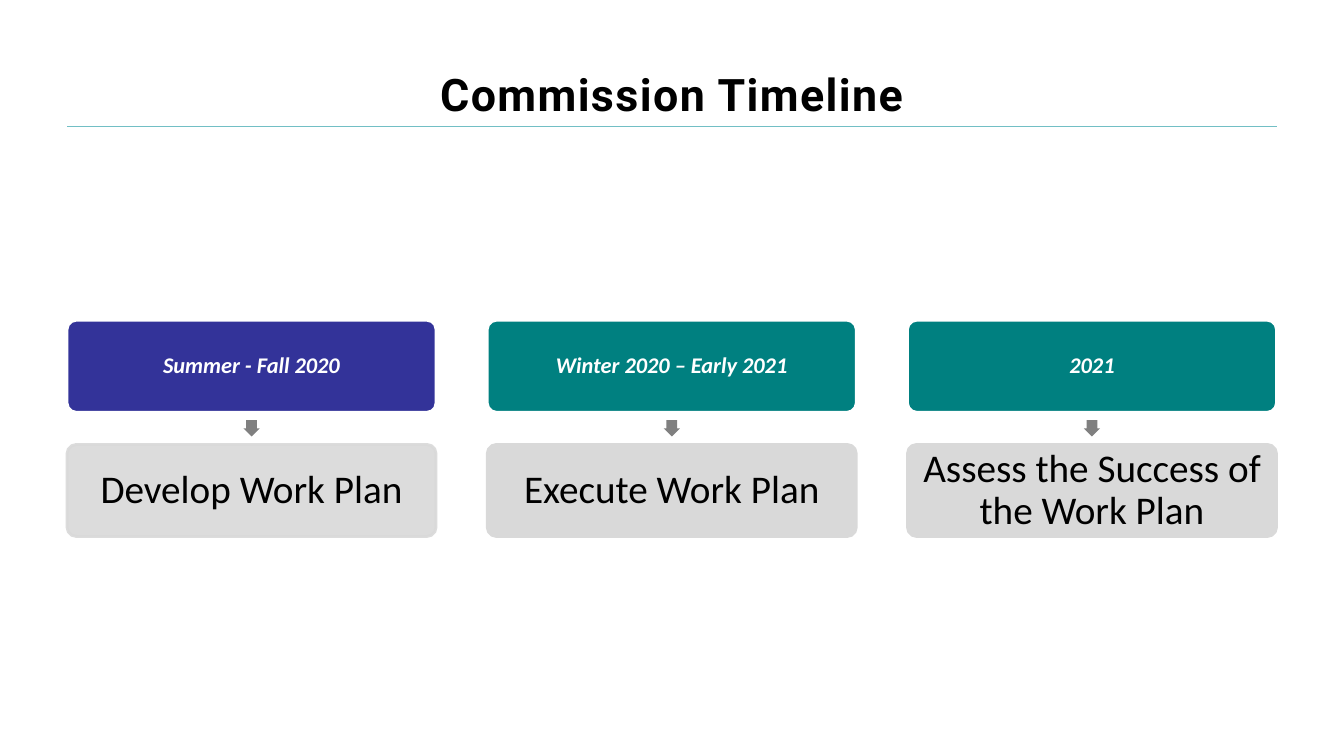
from dataclasses import dataclass

from pptx import Presentation
from pptx import util as u
from pptx.dml.color import RGBColor
from pptx.enum import shapes, text
from pptx.oxml import ns, xmlchemy


@dataclass(frozen=True)
class Theme:
    white: str = "FFFFFF"
    black: str = "000000"
    indigo: str = "333399"
    teal: str = "008080"
    rule: str = "72BFC5"
    panel: str = "D9D9D9"
    arrow: str = "808080"
    title_font: str = "Roboto"
    body_font: str = "Calibri"
    title_size: int = 32
    period_size: int = 16
    task_size: int = 28


THEME = Theme()
LEFT = 1.69
BOX_WIDTH, BOX_HEIGHT = 9.3, 2.32
COLUMN_PITCH = 10.59
PERIOD_TOP, ARROW_TOP, TASK_TOP = 8.07, 10.59, 11.2
ARROW_SIZE = 0.41

STAGES = [
    ("Summer - Fall 2020", "Develop Work Plan", THEME.indigo, 90),
    ("Winter 2020 – Early 2021", "Execute Work Plan", THEME.teal, 100),
    ("2021", "Assess the Success of the Work Plan", THEME.teal, 100),
]


def set_text(shape, words, font_name, size, color, bold=False, italic=False):
    frame = shape.text_frame
    frame.word_wrap = True
    frame.vertical_anchor = text.MSO_ANCHOR.MIDDLE
    frame.text = words
    paragraph = frame.paragraphs[0]
    paragraph.alignment = text.PP_ALIGN.CENTER
    font = paragraph.runs[0].font
    font.name, font.size = font_name, u.Pt(size)
    font.bold, font.italic = bold, italic
    font.color.rgb = RGBColor.from_string(color)
    return paragraph


def set_opacity(shape, percent):
    for color in shape.fill._xPr.iter(ns.qn("a:srgbClr")):
        alpha = xmlchemy.OxmlElement("a:alpha")
        alpha.set("val", str(percent * 1000))
        color.append(alpha)


def add_title(slide, words):
    box = slide.shapes.add_textbox(u.Cm(LEFT), u.Cm(0.76), u.Cm(30.48), u.Cm(3.18))
    paragraph = set_text(box, words, THEME.title_font, THEME.title_size, THEME.black, bold=True)
    paragraph.runs[0].font._element.set("spc", "100")


def add_rule(slide):
    y = u.Cm(3.18)
    line = slide.shapes.add_connector(
        shapes.MSO_CONNECTOR.STRAIGHT, u.Cm(LEFT), y, u.Cm(LEFT + 30.48), y)
    line.line.color.rgb = RGBColor.from_string(THEME.rule)
    line.line.width = u.Pt(1)
    line._element.spPr.append(xmlchemy.OxmlElement("a:effectLst"))


def add_filled(slide, kind, left, top, width, height, fill):
    shape = slide.shapes.add_shape(kind, u.Cm(left), u.Cm(top), u.Cm(width), u.Cm(height))
    shape.shadow.inherit = False
    shape.fill.solid()
    shape.fill.fore_color.rgb = RGBColor.from_string(fill)
    return shape


def add_box(slide, left, top, fill, outline, inset, words, size, color, emphasis=False):
    box = add_filled(slide, shapes.MSO_SHAPE.ROUNDED_RECTANGLE,
                     left, top, BOX_WIDTH, BOX_HEIGHT, fill)
    box.adjustments[0] = 0.1
    box.line.color.rgb = RGBColor.from_string(outline)
    box.line.width = u.Pt(2)
    frame = box.text_frame
    frame.margin_left = frame.margin_right = u.Cm(inset)
    frame.margin_top = frame.margin_bottom = u.Cm(inset)
    paragraph = set_text(box, words, THEME.body_font, size, color, emphasis, emphasis)
    paragraph.line_spacing = 0.9
    return box


def add_arrow(slide, left):
    arrow = add_filled(slide, shapes.MSO_SHAPE.DOWN_ARROW, left + (BOX_WIDTH - ARROW_SIZE) / 2,
                       ARROW_TOP, ARROW_SIZE, ARROW_SIZE, THEME.arrow)
    arrow.adjustments[0] = 0.67
    arrow.adjustments[1] = 0.5
    arrow.line.fill.background()


def add_stage(slide, left, period, task, fill, opacity):
    add_box(slide, left, PERIOD_TOP, fill, THEME.white, 0.05,
            period, THEME.period_size, THEME.white, emphasis=True)
    add_arrow(slide, left)
    task_box = add_box(slide, left, TASK_TOP, THEME.panel, THEME.panel, 0.1,
                       task, THEME.task_size, THEME.black)
    if opacity < 100:
        set_opacity(task_box, opacity)


def main():
    presentation = Presentation()
    presentation.slide_width = u.Cm(33.87)
    presentation.slide_height = u.Cm(19.05)
    slide = presentation.slides.add_slide(presentation.slide_layouts[6])
    add_rule(slide)
    add_title(slide, "Commission Timeline")
    for column, stage in enumerate(STAGES):
        add_stage(slide, LEFT + column * COLUMN_PITCH, *stage)
    presentation.save("out.pptx")


if __name__ == "__main__":
    main()
